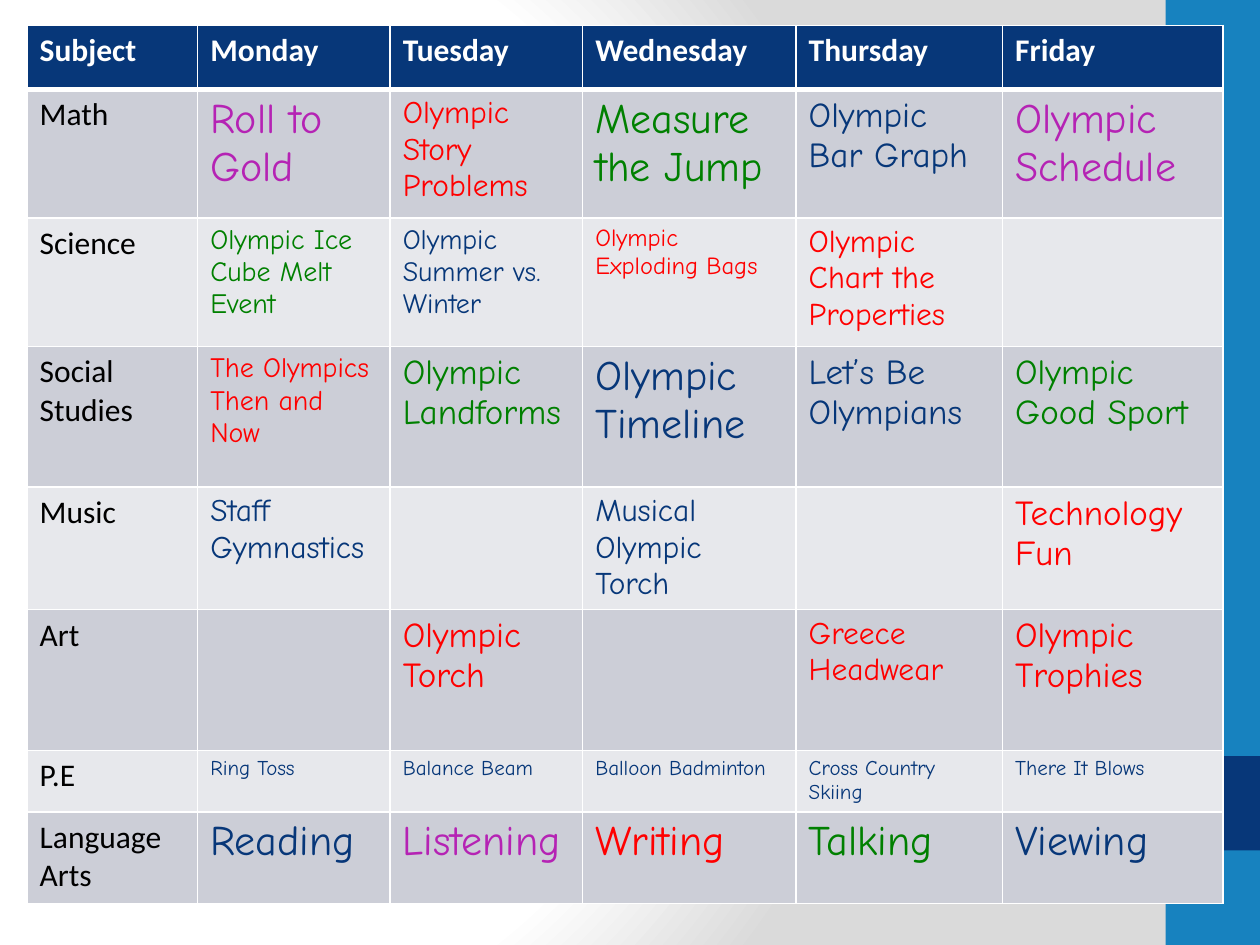
from dataclasses import dataclass

from pptx import Presentation
from pptx.dml.color import RGBColor
from pptx.enum.shapes import MSO_SHAPE
from pptx.oxml import parse_xml
from pptx.oxml.ns import nsdecls, qn
from pptx.util import Pt

RECT = MSO_SHAPE.RECTANGLE
BLANK_LAYOUT = 6


@dataclass(frozen=True)
class Theme:
    white: str = "FFFFFF"
    black: str = "000000"
    gray: str = "DADADA"
    navy: str = "073779"
    blue: str = "1782BF"
    purple: str = "B523B4"
    red: str = "FF0000"
    green: str = "008000"
    dark_band: str = "CCCED7"
    light_band: str = "E7E8EC"
    label_font: str = "Calibri"
    event_font: str = "Comic Neue"
    label: int = 18
    tiny: int = 12
    small: int = 14
    medium: int = 16
    normal: int = 18
    large: int = 20
    huge: int = 24


T = Theme()

DAYS = ["Subject", "Monday", "Tuesday", "Wednesday", "Thursday", "Friday"]
COL_WIDTHS = [97.5, 110, 110, 122, 118, 126]
HEADER_HEIGHT = 36.5

# Subject, row height, then (event, size, colour) for each day
SUBJECTS = [
    ("Math", 73.5, [
        ("Roll to Gold", T.huge, T.purple),
        ("Olympic Story Problems", T.normal, T.red),
        ("Measure the Jump", T.huge, T.green),
        ("Olympic Bar Graph", T.large, T.navy),
        ("Olympic Schedule", T.huge, T.purple)]),
    ("Science", 73.5, [
        ("Olympic Ice Cube Melt Event", T.medium, T.green),
        ("Olympic Summer vs. Winter", T.medium, T.navy),
        ("Olympic Exploding Bags", T.small, T.red),
        ("Olympic Chart the Properties", T.normal, T.red),
        None]),
    ("Social Studies", 80.5, [
        ("The Olympics Then and Now", T.medium, T.red),
        ("Olympic Landforms", T.large, T.green),
        ("Olympic Timeline", T.huge, T.navy),
        ("Let’s Be Olympians", T.large, T.navy),
        ("Olympic Good Sport", T.large, T.green)]),
    ("Music", 70, [
        ("Staff Gymnastics", T.normal, T.navy),
        None,
        ("Musical Olympic Torch", T.normal, T.navy),
        None,
        ("Technology Fun", T.large, T.red)]),
    ("Art", 80.5, [
        None,
        ("Olympic Torch", T.large, T.red),
        None,
        ("Greece Headwear", T.normal, T.red),
        ("Olympic Trophies", T.large, T.red)]),
    ("P.E", 35, [
        ("Ring Toss", T.tiny, T.navy),
        ("Balance Beam", T.tiny, T.navy),
        ("Balloon Badminton", T.tiny, T.navy),
        ("Cross Country Skiing", T.tiny, T.navy),
        ("There It Blows", T.tiny, T.navy)]),
    ("Language Arts", 52.5, [
        ("Reading", T.huge, T.navy),
        ("Listening", T.huge, T.purple),
        ("Writing", T.huge, T.red),
        ("Talking", T.huge, T.green),
        ("Viewing", T.huge, T.navy)]),
]


def set_background(slide):
    """Radial gradient, which needs XML in place of the linear default."""
    slide.background.fill.gradient()
    grad = next(slide.element.iter(qn("a:gradFill")))
    stops = "".join(
        f'<a:gs pos="{pos * 1000}"><a:srgbClr val="{color}"/></a:gs>'
        for pos, color in [(0, T.white), (75, T.white), (100, T.gray)])
    grad.getparent().replace(grad, parse_xml(
        f'<a:gradFill {nsdecls("a")} rotWithShape="1"><a:gsLst>{stops}</a:gsLst>'
        '<a:path path="circle">'
        '<a:fillToRect l="20000" t="50000" r="100000" b="50000"/>'
        '</a:path></a:gradFill>'))


def add_bar(slide, left, top, width, height, color):
    sp = slide.shapes.add_shape(RECT, Pt(left), Pt(top), Pt(width), Pt(height))
    sp.shadow.inherit = False
    sp.fill.solid()
    sp.fill.fore_color.rgb = RGBColor.from_string(color)
    sp.line.fill.background()


def set_borders(cell, top=1, bottom=1):
    tc_pr = cell._tc.get_or_add_tcPr()
    sides = [("lnL", 1), ("lnR", 1), ("lnT", top), ("lnB", bottom)]
    for i, (side, width) in enumerate(sides):
        tc_pr.insert(i, parse_xml(
            f'<a:{side} {nsdecls("a")} w="{Pt(width)}"><a:solidFill>'
            f'<a:srgbClr val="{T.white}"/></a:solidFill></a:{side}>'))


def style_cell(cell, fill, text="", size=T.label, color=T.black,
               font=T.label_font, bold=False):
    cell.fill.solid()
    cell.fill.fore_color.rgb = RGBColor.from_string(fill)
    p = cell.text_frame.paragraphs[0]
    if text:
        p.text = text
    p.font.name = font
    p.font.size = Pt(size)
    p.font.bold = bold
    p.font.color.rgb = RGBColor.from_string(color)


def add_schedule(slide, left, top):
    heights = [HEADER_HEIGHT] + [height for _, height, _ in SUBJECTS]
    table = slide.shapes.add_table(
        len(heights), len(DAYS), Pt(left), Pt(top),
        Pt(sum(COL_WIDTHS)), Pt(sum(heights))).table
    table.horz_banding = False
    for col, width in zip(table.columns, COL_WIDTHS):
        col.width = Pt(width)
    for row, height in zip(table.rows, heights):
        row.height = Pt(height)

    # Header row, with a heavier rule below it
    for c, day in enumerate(DAYS):
        cell = table.cell(0, c)
        style_cell(cell, T.navy, day, color=T.white, bold=True)
        set_borders(cell, bottom=3)

    # Subject rows in alternating bands
    for r, (subject, _, events) in enumerate(SUBJECTS, start=1):
        band = T.dark_band if r % 2 else T.light_band
        style_cell(table.cell(r, 0), band, subject)
        for c, event in enumerate(events, start=1):
            style_cell(table.cell(r, c), band, *(event or ()), font=T.event_font)
        for cell in table.rows[r].cells:
            set_borders(cell, top=3 if r == 1 else 1)


def main():
    prs = Presentation()
    prs.slide_width, prs.slide_height = Pt(720), Pt(540)
    slide = prs.slides.add_slide(prs.slide_layouts[BLANK_LAYOUT])

    # Backdrop
    set_background(slide)
    add_bar(slide, 666, 0, 54, 540, T.blue)
    add_bar(slide, 666, 432, 54, 54, T.navy)

    # Weekly schedule
    add_schedule(slide, 15.5, 14.5)
    prs.save("out.pptx")


if __name__ == "__main__":
    main()
